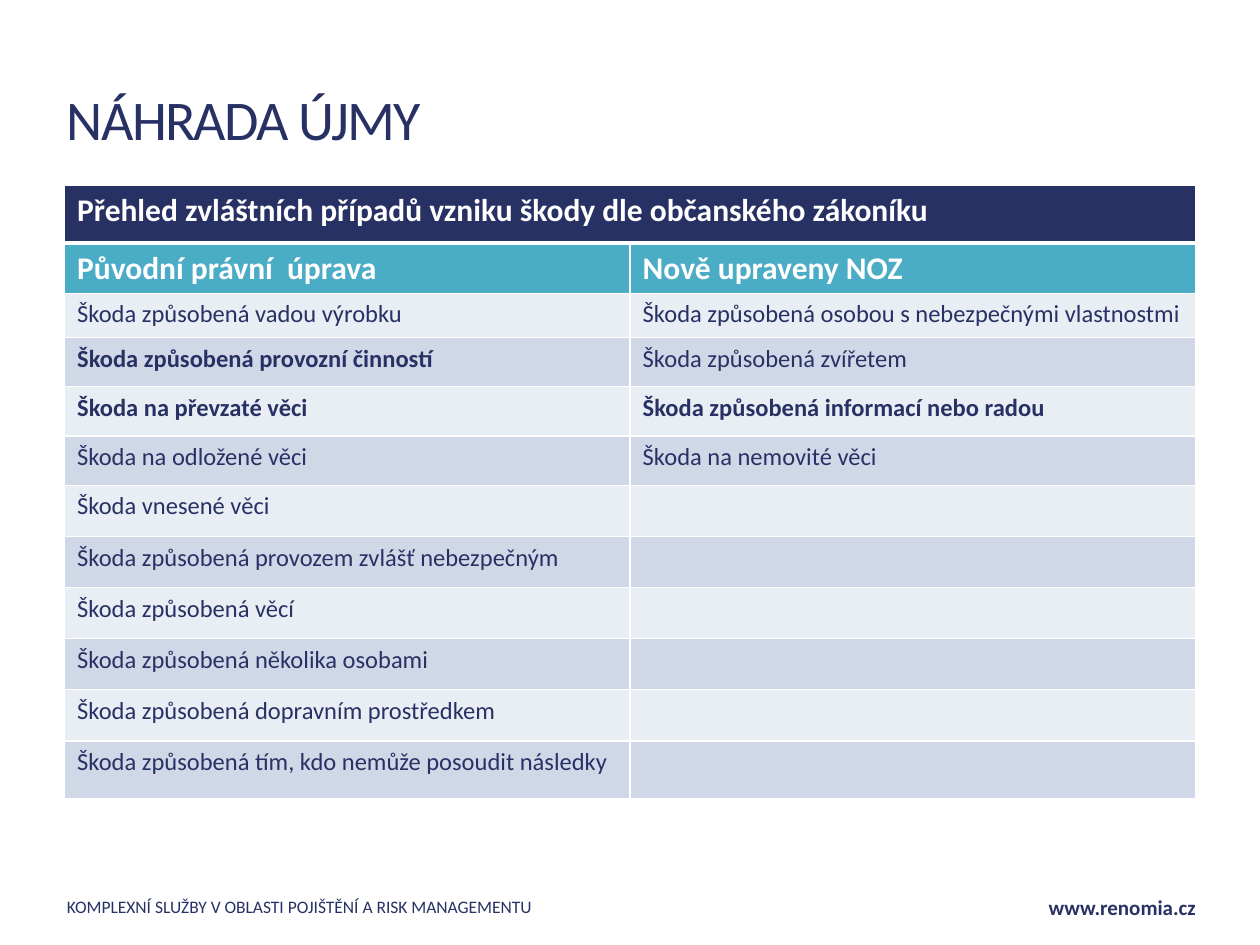
from lxml import etree
from pptx import Presentation
from pptx.dml.color import RGBColor
from pptx.enum import text as t
from pptx.oxml import ns
from pptx.util import Pt

NAVY = RGBColor(0x28, 0x31, 0x64)
TEAL = RGBColor(0x4B, 0xAC, 0xC6)
PALE = RGBColor(0xE9, 0xED, 0xF4)
MIST = RGBColor(0xD0, 0xD8, 0xE8)
WHITE = RGBColor(0xFF, 0xFF, 0xFF)


def write(frame, words, size=14, color=NAVY, bold=False, align=t.PP_ALIGN.LEFT, track=0):
    para = frame.paragraphs[0]
    para.alignment = align
    run = para.add_run()
    run.text = words
    font = run.font
    font.name, font.size, font.bold = "Calibri", Pt(size), bold
    font.color.rgb = color
    if track:
        run._r.get_or_add_rPr().set("spc", str(track * 100))


def edge(cell, side, width):
    line = etree.SubElement(cell._tc.get_or_add_tcPr(), ns.qn("a:ln" + side), w=str(Pt(width)))
    fill = etree.SubElement(line, ns.qn("a:solidFill"))
    etree.SubElement(fill, ns.qn("a:srgbClr"), val=str(WHITE))


deck = Presentation()
deck.slide_width, deck.slide_height = Pt(720), Pt(540)
slide = deck.slides.add_slide(deck.slide_layouts[6])

labels = [
    ("www.renomia.cz", (545, 507.6, 145.5, 21.6), (7.2, 7.2), True,
     dict(size=12, bold=True, align=t.PP_ALIGN.RIGHT)),
    ("KOMPLEXNÍ SLUŽBY V OBLASTI POJIŠTĚNÍ A RISK MANAGEMENTU",
     (38.2, 508.3, 346.3, 19.4), (0, 7.2), True, dict(size=10)),
    ("NÁHRADA ÚJMY", (38.2, 22.3, 548.6, 90), (0, 0), False, dict(size=32, track=-1)),
]
for words, place, inset, wrap, style in labels:
    frame = slide.shapes.add_textbox(*map(Pt, place)).text_frame
    frame.margin_left, frame.margin_right = map(Pt, inset)
    frame.word_wrap = wrap
    frame.vertical_anchor = t.MSO_ANCHOR.TOP if wrap else t.MSO_ANCHOR.MIDDLE
    write(frame, words, **style)

rows = [
    ("Přehled zvláštních případů vzniku škody dle občanského zákoníku", ""),
    ("Původní právní  úprava", "Nově upraveny NOZ"),
    ("Škoda způsobená vadou výrobku", "Škoda způsobená osobou s nebezpečnými vlastnostmi"),
    ("Škoda způsobená provozní činností", "Škoda způsobená zvířetem"),
    ("Škoda na převzaté věci", "Škoda způsobená informací nebo radou"),
    ("Škoda na odložené věci", "Škoda na nemovité věci"),
    ("Škoda vnesené věci", ""),
    ("Škoda způsobená provozem zvlášť nebezpečným", ""),
    ("Škoda způsobená věcí", ""),
    ("Škoda způsobená několika osobami", ""),
    ("Škoda způsobená dopravním prostředkem", ""),
    ("Škoda způsobená tím, kdo nemůže posoudit následky", ""),
]
strong = {(3, 0), (4, 0), (4, 1)}
highs = [33, 28.2, 25.2] + [28.2] * 3 + [29.2] * 5 + [33]
grid = slide.shapes.add_table(
    len(rows), 2, Pt(36.9), Pt(105.8), Pt(646.4), Pt(sum(highs))).table
for col in grid.columns:
    col.width = Pt(323.2)
for r, (pair, high) in enumerate(zip(rows, highs)):
    grid.rows[r].height = Pt(high)
    head = r < 2
    shade = (NAVY, TEAL)[r] if head else (PALE, MIST)[r % 2]
    for c, words in enumerate(pair):
        cell = grid.cell(r, c)
        for side in "LRTB":
            edge(cell, side, 3 if (r, side) in ((0, "B"), (1, "T")) else 1)
        cell.fill.solid()
        cell.fill.fore_color.rgb = shade
        if words:
            write(cell.text_frame, words, size=18 if head else 14,
                  color=WHITE if head else NAVY, bold=head or (r, c) in strong)
grid.cell(0, 0).merge(grid.cell(0, 1))

deck.save("out.pptx")
